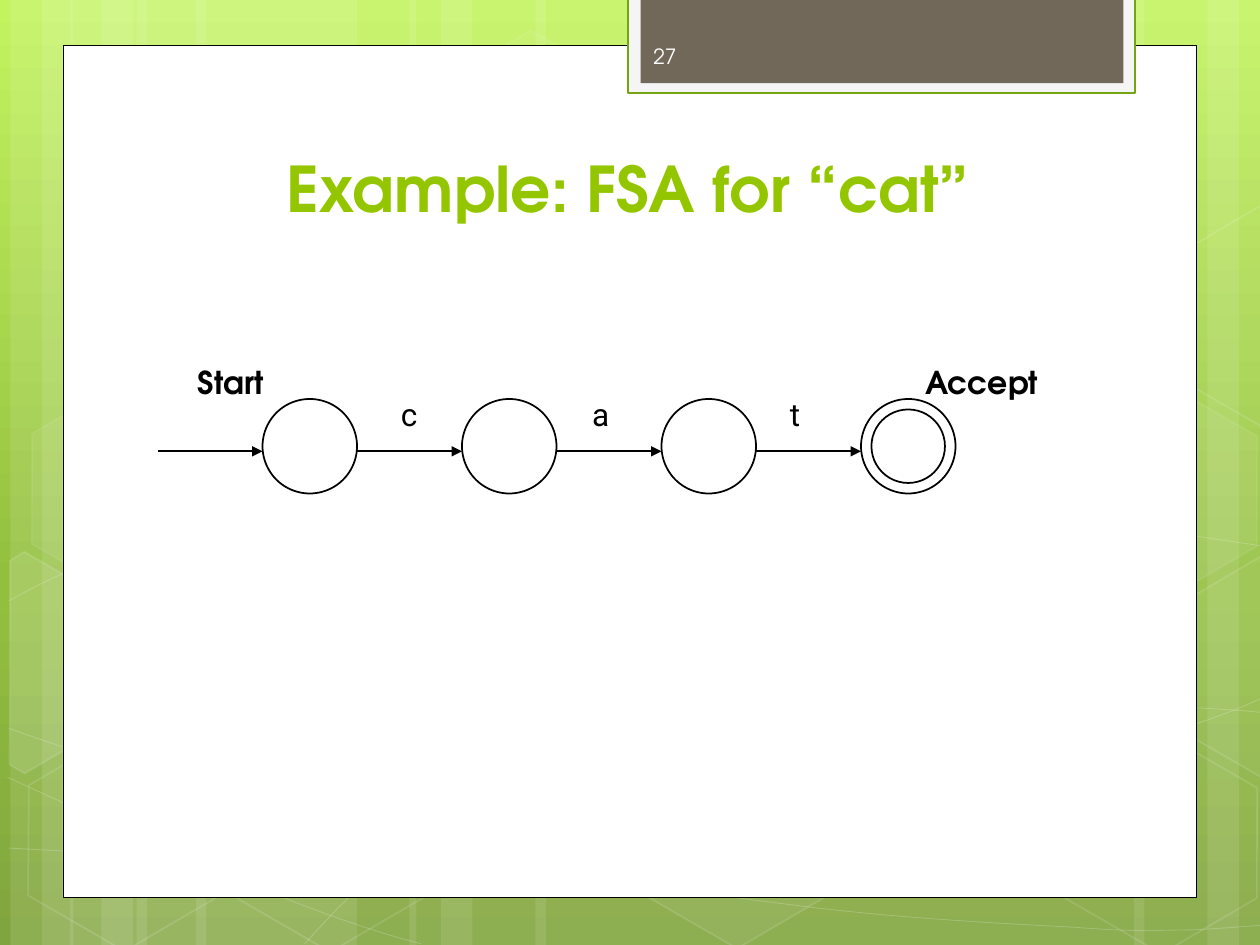
from dataclasses import dataclass

from lxml.etree import SubElement
from pptx import Presentation
from pptx.dml.color import RGBColor
from pptx.enum.shapes import MSO_CONNECTOR, MSO_SHAPE
from pptx.enum.text import MSO_ANCHOR, MSO_AUTO_SIZE, PP_ALIGN
from pptx.oxml.ns import qn
from pptx.util import Pt


@dataclass(frozen=True)
class Theme:
    white: str = "FFFFFF"
    black: str = "000000"
    title: str = "94C600"
    tab_frame: str = "F5F5F5"
    tab_line: str = "74A510"
    tab: str = "71685A"
    number: str = "FEFEFE"
    background: tuple = (("C3F35F", 0), ("93BF3F", 62), ("81A53E", 100))
    heading_font: str = "TeX Gyre Adventor"
    symbol_font: str = "Roboto"
    title_size: int = 36
    label_size: int = 18
    number_size: int = 12


theme = Theme()


def paint(shape, fill=None, line=None, width=1, fill_alpha=100, line_alpha=100):
    shape.shadow.inherit = False
    properties = shape.element.spPr
    for target, color, alpha in (
        (shape.fill, fill, fill_alpha),
        (shape.line.fill, line, line_alpha),
    ):
        if color is None:
            target.background()
            continue
        target.solid()
        target.fore_color.rgb = RGBColor.from_string(color)
        if alpha < 100:
            parent = properties if target is shape.fill else properties.find(qn("a:ln"))
            node = parent.find(qn("a:solidFill")).find(qn("a:srgbClr"))
            SubElement(node, qn("a:alpha"), val=str(alpha * 1000))
    if line:
        shape.line.width = Pt(width)


def add_text(box, text, font, size, color, bold=False, align=PP_ALIGN.CENTER,
             anchor=MSO_ANCHOR.TOP, wrap=True, grow=False):
    frame = slide.shapes.add_textbox(*map(Pt, box)).text_frame
    frame.text = text
    frame.word_wrap = wrap
    frame.vertical_anchor = anchor
    frame.auto_size = MSO_AUTO_SIZE.SHAPE_TO_FIT_TEXT if grow else MSO_AUTO_SIZE.NONE
    paragraph = frame.paragraphs[0]
    paragraph.alignment = align
    run = paragraph.runs[0]
    run.font.name = font
    run.font.size = Pt(size)
    run.font.bold = bold
    run.font.color.rgb = RGBColor.from_string(color)


presentation = Presentation()
presentation.slide_width = Pt(720)
presentation.slide_height = Pt(540)
slide = presentation.slides.add_slide(presentation.slide_layouts[6])

background = slide.background.fill
background.gradient()
background.gradient_angle = 270
stop_list = background.gradient_stops[0]._gs.getparent()
for stop in list(stop_list):
    stop_list.remove(stop)
for color, position in theme.background:
    stop = SubElement(stop_list, qn("a:gs"), pos=str(position * 1000))
    SubElement(stop, qn("a:srgbClr"), val=color)

stripes = [(78, 126), (6, 36), (24, 60), (112, 126), (40, 36), (58, 60),
           (528, 126), (690, 36), (648, 60), (306, 222), (234, 36), (252, 60)]
for left, width in stripes:
    stripe = slide.shapes.add_shape(MSO_SHAPE.RECTANGLE, Pt(left), 0, Pt(width), Pt(540))
    paint(stripe, fill=theme.white, fill_alpha=10)

curves = [
    [(5, 484.6), (43.9, 486.7), (82.8, 488.9), (136.8, 488.2), (190.8, 487.4),
     (257.8, 486), (329.8, 478.8), (401.8, 471.6), (504, 457.9), (570.2, 444.2),
     (635.8, 430.6), (703.4, 409), (725, 396.7)],
    [(5, 343.4), (25.9, 331.9), (46.8, 321.1), (87.1, 310.3), (128.2, 299.5),
     (186.5, 283.7), (249.8, 278.6), (313.9, 273.6), (391.7, 272.9), (470.9, 278.6),
     (550.1, 284.4), (681.8, 306.7), (725, 312.5)],
    [(4.3, 444.2), (91.4, 483.8), (177.8, 523.4), (240.5, 539.3)],
    [(5, 416.2), (27.4, 424.1), (50.4, 432), (92.2, 443.5), (133.9, 454.3),
     (196.6, 472.3), (257, 484.6), (316.8, 496.8), (392.4, 509.8), (452.2, 517),
     (511.9, 524.9), (576, 527.8), (614.2, 529.9), (651.6, 532.8), (661.7, 531.4),
     (680.4, 531.4), (699.1, 530.6), (712.1, 529.2), (725, 528.5)],
    [(174.2, 539.3), (187.2, 524.9), (200.2, 510.5), (217.4, 497.5), (234.7, 484.6),
     (259.2, 470.2), (279.4, 460.1), (299.5, 450), (311.8, 445.7), (338.4, 438.5),
     (364.3, 431.3), (412.6, 421.2), (437.8, 416.2), (463.7, 411.1), (467.3, 411.1),
     (489.6, 409.7), (511.9, 407.5), (547.2, 405.4), (571.7, 404.6), (596.9, 403.9),
     (637.9, 404.6), (637.9, 404.6), (654, 404.6), (670, 404.6), (686.2, 404.6),
     (699.1, 405.4), (711.4, 406.1), (717.8, 406.8), (724.3, 407.5), (722.2, 406.8),
     (724.3, 407.5)],
]
for curve in curves:
    points = [(x * 10, y * 10) for x, y in curve]
    builder = slide.shapes.build_freeform(*points[0], scale=Pt(0.1))
    builder.add_line_segments(points[1:], close=False)
    wave = builder.convert_to_shape()
    segments = list(wave.element.spPr.iter(qn("a:lnTo")))
    outline = segments[0].getparent()
    for start in range(0, len(segments), 3):
        bezier = SubElement(outline, qn("a:cubicBezTo"))
        for segment in segments[start:start + 3]:
            bezier.append(segment[0])
            outline.remove(segment)
    paint(wave, line=theme.white, width=0.5, line_alpha=20)

hexagons = [(240.5, 26, 4, 8), (358, 424, 6, 12), (8, 425.5, 0, 12), (10, 224.5, 7, 8),
            (125.5, 426, 0, 12), (600.5, 427, 0, 12), (600.5, 226, 7, 8)]
for left, top, fill_alpha, line_alpha in hexagons:
    hexagon = slide.shapes.add_shape(MSO_SHAPE.HEXAGON, Pt(left), Pt(top), Pt(126), Pt(109.5))
    hexagon.rotation = 30
    hexagon.adjustments[0] = 0.285
    paint(hexagon, theme.white if fill_alpha else None, theme.white, 1, fill_alpha, line_alpha)

left_cut = [(0, 8.5), (4.5, 0), (68, 0), (99, 55), (68, 109.5), (58, 109.5)]
right_cut = [(0, 54), (30.5, 0), (37.5, 0), (97.5, 104), (94.5, 109.5), (31, 109.5)]
cut_hexagons = [(left_cut, -24, 330.5, 10), (right_cut, 660.5, 319.5, 4),
                (right_cut, 660.5, 119, 0)]
for corners, left, top, fill_alpha in cut_hexagons:
    points = [((left + x) * 10, (top + y) * 10) for x, y in corners]
    builder = slide.shapes.build_freeform(*points[0], scale=Pt(0.1))
    builder.add_line_segments(points[1:], close=True)
    cut_hexagon = builder.convert_to_shape()
    cut_hexagon.rotation = 30
    paint(cut_hexagon, theme.white if fill_alpha else None, theme.white, 1, fill_alpha, 12)

panels = [
    ((36, 26, 648, 487), theme.white, theme.black, 0.5),
    ((359, -1.5, 289.5, 54.75), theme.tab_frame, theme.tab_line, 1.25),
    ((366, -1.5, 276, 49), theme.tab, None, 0),
]
for box, fill, line, width in panels:
    panel = slide.shapes.add_shape(MSO_SHAPE.RECTANGLE, *map(Pt, box))
    paint(panel, fill, line, width)

add_text((82.25, 81, 553, 51), "Example: FSA for “cat”", theme.heading_font,
         theme.title_size, theme.title, bold=True, anchor=MSO_ANCHOR.BOTTOM)

first_state, state_pitch, state_top, diameter = 150, 114, 228, 54
states = [(first_state + index * state_pitch, state_top, diameter) for index in range(4)]
accept_ring = (states[-1][0] + 6, state_top + 6, diameter - 12)
for left, top, size in states + [accept_ring]:
    state = slide.shapes.add_shape(MSO_SHAPE.OVAL, Pt(left), Pt(top), Pt(size), Pt(size))
    paint(state, line=theme.black)

for left, _, _ in states:
    arrow = slide.shapes.add_connector(MSO_CONNECTOR.STRAIGHT, Pt(left - 60), Pt(257.9),
                                       Pt(left), Pt(257.9))
    arrow.line.color.rgb = RGBColor.from_string(theme.black)
    arrow.line.width = Pt(1)
    SubElement(arrow.element.spPr.find(qn("a:ln")), qn("a:tailEnd"), type="triangle")
    SubElement(arrow.element.spPr, qn("a:effectLst"))

for symbol, left, width in (("a", 331.25, 24), ("t", 444.25, 20), ("c", 222, 23)):
    add_text((left, 222, width, 29), symbol, theme.symbol_font, theme.label_size,
             theme.black, wrap=False, grow=True)

add_text((366.25, 17.5, 105, 29), "27", theme.heading_font, theme.number_size, theme.number,
         align=PP_ALIGN.LEFT, anchor=MSO_ANCHOR.MIDDLE)

for label, left, width in (("Start", 96, 72), ("Accept", 516, 90)):
    add_text((left, 204, width, 29), label, theme.heading_font, theme.label_size,
             theme.black, bold=True, grow=True)

presentation.save("out.pptx")
